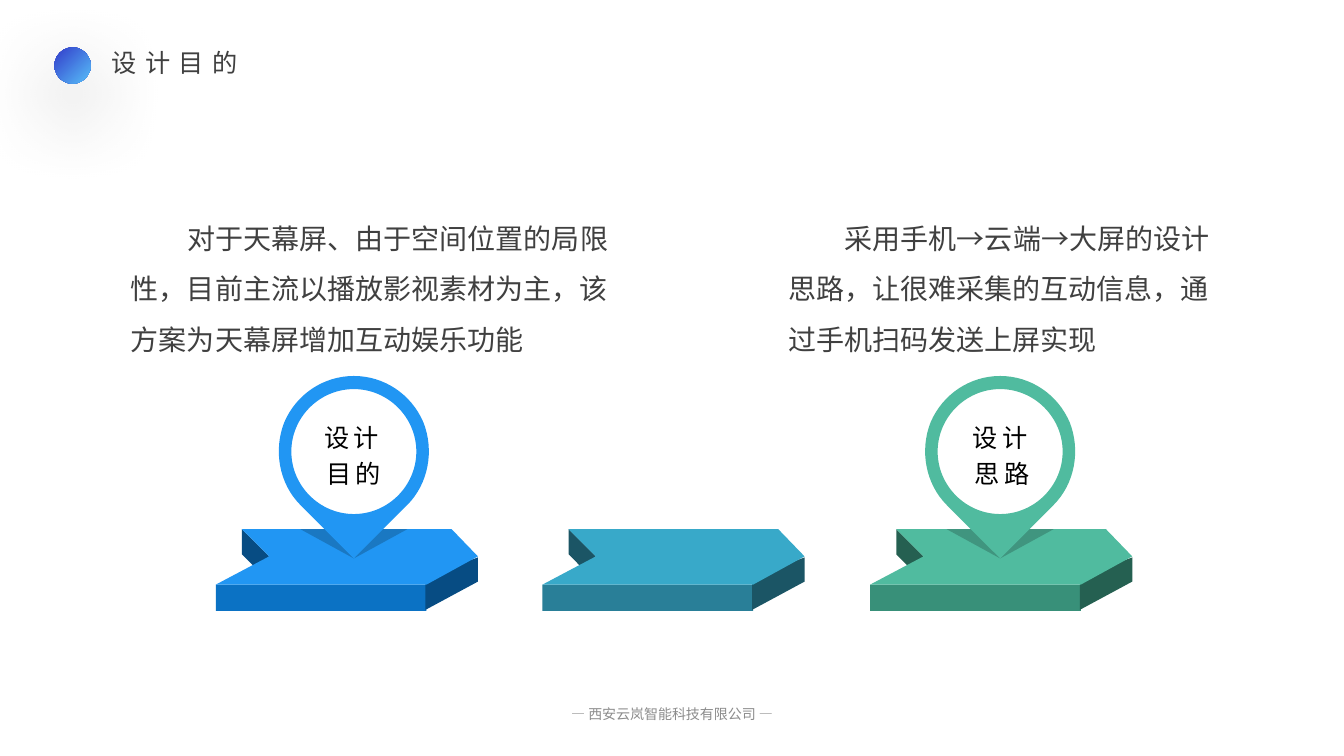
from dataclasses import dataclass

from lxml import etree
from pptx import Presentation
from pptx.dml.color import RGBColor
from pptx.enum.shapes import MSO_SHAPE
from pptx.enum.text import MSO_ANCHOR, MSO_AUTO_SIZE, PP_ALIGN
from pptx.oxml.ns import qn
from pptx.util import Emu, Pt

PX = 9144  # 100 px to the inch
RECTANGLE, OVAL = MSO_SHAPE.RECTANGLE, MSO_SHAPE.OVAL
LEFT, CENTER = PP_ALIGN.LEFT, PP_ALIGN.CENTER
TOP, MIDDLE = MSO_ANCHOR.TOP, MSO_ANCHOR.MIDDLE
FIT_SHAPE = MSO_AUTO_SIZE.SHAPE_TO_FIT_TEXT
CJK_FONT = "Noto Sans CJK SC"
DARK_GREY = "404040"

Point = tuple[int, int]

# Shared heights of the arrow blocks and pins
BLOCK_TOP = 525
PIN_CENTER_Y, PIN_RADIUS, TIP_DROP = 448, 75, 106

# Pin curves around the ring's centre: a start, then a point or three curve points per step
HOLE: list[list[Point]] = [
    [(0, -62)],
    [(-34, -62), (-62, -34), (-62, 0)],
    [(-62, 34), (-34, 62), (0, 62)],
    [(34, 62), (62, 34), (62, 0)],
    [(62, -34), (34, -62), (0, -62)],
]
DROP: list[list[Point]] = [
    [(0, -75)],
    [(30, -75), (57, -57), (69, -29)],
    [(80, -1), (74, 32), (53, 53)],
    [(0, TIP_DROP)],
    [(-53, 53)],
    [(-74, 32), (-80, -1), (-69, -29)],
    [(-57, -57), (-30, -75), (0, -75)],
]


@dataclass
class Block:
    left: int
    top_color: str
    front_color: str
    side_color: str


@dataclass
class Pin:
    center: int
    color: str
    label: str
    label_left: int
    body: str
    body_left: int
    body_width: int


BLOCKS = [
    Block(214, "2196F3", "0B72C4", "074C83"),
    Block(538, "38A9C9", "297F98", "1B5565"),
    Block(863, "50BB9F", "389079", "256051"),
]
PINS = [
    Pin(351, "2196F3", "设计目的", 298,
        "对于天幕屏、由于空间位置的局限性，目前主流以播放影视素材为主，该方案为天幕屏增加互动娱乐功能", 120, 506),
    Pin(992, "50BB9F", "设计思路", 941,
        "采用手机→云端→大屏的设计思路，让很难采集的互动信息，通过手机扫码发送上屏实现", 772, 446),
]


def px(length: int) -> Emu:
    return Emu(length * PX)


def rgb(color: str) -> RGBColor:
    return RGBColor.from_string(color)


def paint(shape, color: str, alpha: int = 100) -> None:
    shape.shadow.inherit = False
    shape.line.fill.background()
    shape.fill.solid()
    shape.fill.fore_color.rgb = rgb(color)
    if alpha < 100:
        srgb = shape._element.spPr.find(f".//{qn('a:srgbClr')}")
        etree.SubElement(srgb, qn("a:alpha"), val=str(alpha * 1000))


def add_outline(slide, corners: list[Point], color: str, alpha: int = 100):
    scaled = [(px(x), px(y)) for x, y in corners]
    builder = slide.shapes.build_freeform(*scaled[0], scale=1.0)
    builder.add_line_segments(scaled[1:], close=True)
    shape = builder.convert_to_shape()
    paint(shape, color, alpha)
    return shape


def add_text(slide, text: str, box: tuple[int, int, int, int], size: int, color: str,
             font_name: str = "Arial", align=LEFT, anchor=TOP, line_spacing: float = 1.0,
             letter_spacing: int = 0, indent: int = 0, grow: bool = False) -> None:
    frame = slide.shapes.add_textbox(*map(px, box)).text_frame
    frame.word_wrap = True
    frame.vertical_anchor = anchor
    if grow:
        frame.auto_size = FIT_SHAPE
    paragraph = frame.paragraphs[0]
    paragraph.text = text
    paragraph.alignment = align
    paragraph.line_spacing = line_spacing
    if indent:
        paragraph._p.get_or_add_pPr().set("indent", str(px(indent)))
    font = paragraph.font
    font.size = Pt(size)
    font.name = font_name
    font.color.rgb = rgb(color)
    etree.SubElement(font._rPr, qn("a:ea"), typeface=CJK_FONT)
    if letter_spacing:
        font._rPr.set("spc", str(letter_spacing * 100))


def add_title_dot(slide) -> None:
    dot = slide.shapes.add_shape(OVAL, px(54), px(47), px(36), px(36))
    dot.line.fill.background()
    dot.fill.gradient()
    dot.fill.gradient_angle = 315
    for stop, color in zip(dot.fill.gradient_stops, ("323CCA", "58BFF9")):
        stop.color.rgb = rgb(color)
    # Soft shadow below the dot
    dot.shadow.inherit = False
    effects = dot._element.spPr.find(qn("a:effectLst"))
    shadow = etree.SubElement(effects, qn("a:outerShdw"), blurRad=str(Pt(60)),
                              dist=str(Pt(20)), dir="5400000", rotWithShape="0")
    shade = etree.SubElement(shadow, qn("a:srgbClr"), val="000000")
    etree.SubElement(shade, qn("a:alpha"), val="40000")


def add_block(slide, block: Block) -> None:
    front = slide.shapes.add_shape(RECTANGLE, px(block.left), px(BLOCK_TOP + 55), px(209), px(26))
    paint(front, block.front_color)
    right_side = [(208, 47), (208, 80), (260, 52), (260, 28)]
    notch_side = [(26, 0), (53, 27), (39, 38), (26, 25)]
    top_face = [(26, 0), (53, 27), (0, 55), (209, 55), (260, 27), (234, 0)]
    for face, color in ((right_side, block.side_color), (notch_side, block.side_color),
                        (top_face, block.top_color)):
        add_outline(slide, [(block.left + x, BLOCK_TOP + y) for x, y in face], color)


def add_ring(slide, center: int, color: str) -> None:
    # A diamond sets the extent; the curves then take its place
    extent = [(0, -PIN_RADIUS), (PIN_RADIUS, 0), (0, TIP_DROP), (-PIN_RADIUS, 0)]
    ring = add_outline(slide, [(center + x, PIN_CENTER_Y + y) for x, y in extent], color)
    outline = ring._element.spPr.find(f".//{qn('a:path')}")
    for corner in list(outline):
        outline.remove(corner)
    for contour in (HOLE, DROP):
        for index, points in enumerate(contour):
            tag = "a:moveTo" if index == 0 else "a:lnTo" if len(points) == 1 else "a:cubicBezTo"
            step = etree.SubElement(outline, qn(tag))
            for x, y in points:
                etree.SubElement(step, qn("a:pt"), x=str(px(x + PIN_RADIUS)),
                                 y=str(px(y + PIN_RADIUS)))
        etree.SubElement(outline, qn("a:close"))


def add_pin(slide, pin: Pin) -> None:
    # Shade on the block, then the ring with its point
    shade = [(pin.center - 53, BLOCK_TOP), (pin.center + 53, BLOCK_TOP),
             (pin.center, PIN_CENTER_Y + TIP_DROP)]
    add_outline(slide, shade, "000000", alpha=20)
    add_ring(slide, pin.center, pin.color)
    # Body text above, label inside the ring
    add_text(slide, pin.body, (pin.body_left, 198, pin.body_width, 175), 20, DARK_GREY,
             line_spacing=1.5, indent=56)
    add_text(slide, pin.label, (pin.label_left, 408, 106, 86), 18, "000000",
             align=CENTER, line_spacing=1.2, letter_spacing=3)


def main() -> None:
    deck = Presentation()
    deck.slide_width, deck.slide_height = px(1333), px(750)
    slide = deck.slides.add_slide(deck.slide_layouts[6])

    # Title
    add_title_dot(slide)
    add_text(slide, "设计目的", (101, 42, 236, 40), 18, DARK_GREY, font_name=CJK_FONT,
             letter_spacing=6, grow=True)

    # Arrow blocks and pins
    for block in BLOCKS:
        add_block(slide, block)
    for pin in PINS:
        add_pin(slide, pin)

    # Footer
    add_text(slide, "— 西安云岚智能科技有限公司 —", (450, 691, 433, 35), 10, "8C8C8C",
             align=CENTER, anchor=MIDDLE)
    deck.save("out.pptx")


if __name__ == "__main__":
    main()
